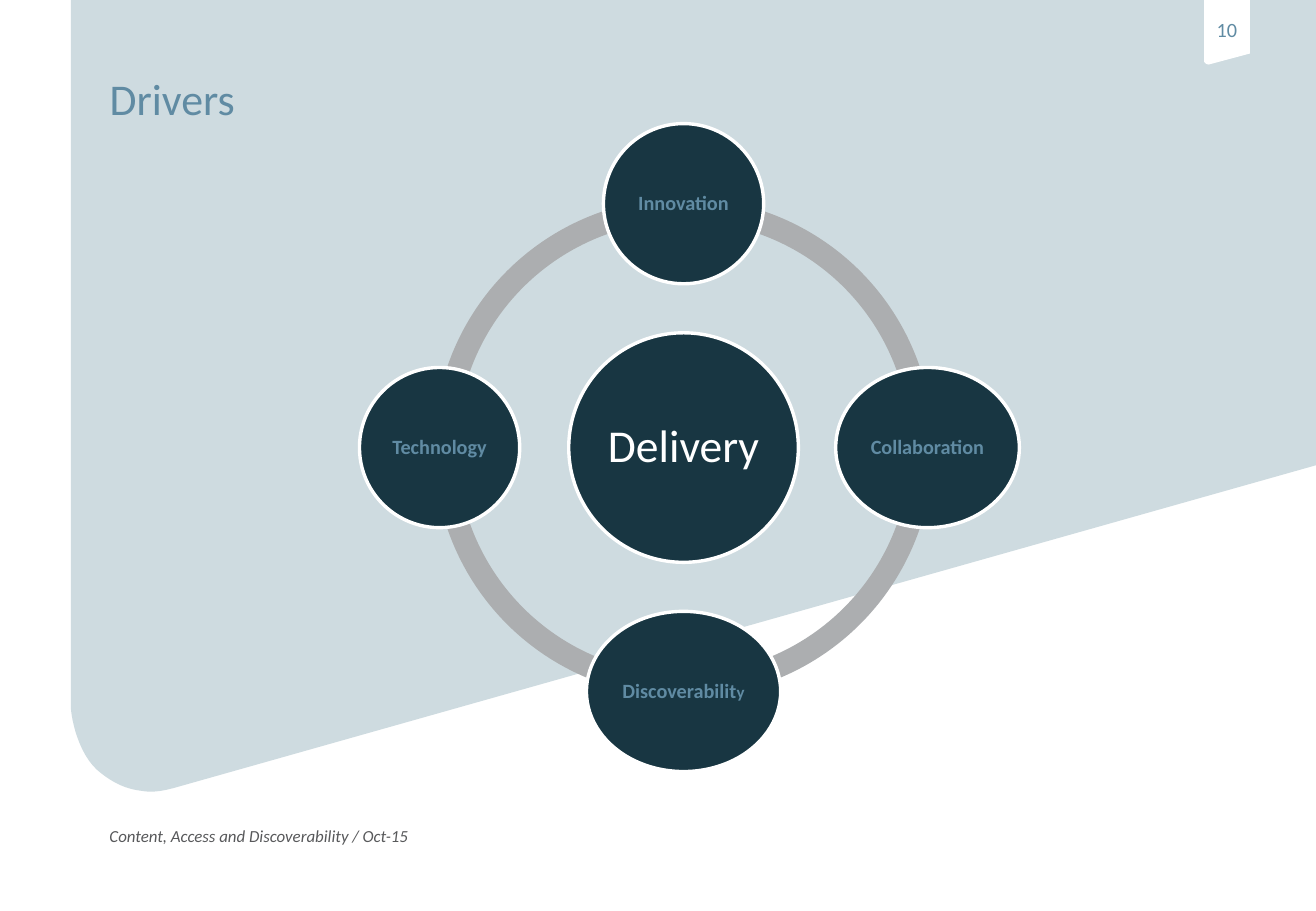
import math

import pptx
import pptx.dml.color
import pptx.enum.shapes
import pptx.enum.text
import pptx.util

Cm = pptx.util.Cm
Pt = pptx.util.Pt
SHAPES = pptx.enum.shapes.MSO_SHAPE
ALIGN = pptx.enum.text.PP_ALIGN
ANCHOR = pptx.enum.text.MSO_ANCHOR

COLORS = {
    "panel": "CEDBE0",
    "accent": "608BA3",
    "node": "183642",
    "ring": "ACAEB0",
    "footer": "58595B",
    "white": "FFFFFF",
}


def rgb(name):
    return pptx.dml.color.RGBColor.from_string(COLORS[name])


def write_text(shape, *spans, size=12, color="accent", bold=False, italic=False,
               align=ALIGN.LEFT, anchor=ANCHOR.TOP, insets=(0, 0, 0, 0),
               spacing=1.0, wrap=True):
    """Fill a shape with one paragraph; a span is a text or a (text, size) pair."""
    frame = shape.text_frame
    frame.auto_size = pptx.enum.text.MSO_AUTO_SIZE.NONE
    frame.word_wrap = wrap
    frame.vertical_anchor = anchor
    (frame.margin_left, frame.margin_top,
     frame.margin_right, frame.margin_bottom) = [Cm(inset) for inset in insets]
    para = frame.paragraphs[0]
    para.alignment = align
    para.line_spacing = spacing
    for item in spans:
        text, span_size = item if isinstance(item, tuple) else (item, size)
        span = para.add_run()
        span.text = text
        span.font.name = "Calibri"
        span.font.size = Pt(span_size)
        span.font.bold = bold
        span.font.italic = italic
        span.font.color.rgb = rgb(color)


def paint(shape, fill, line=None):
    shape.shadow.inherit = False
    shape.fill.solid()
    shape.fill.fore_color.rgb = rgb(fill)
    if line:
        shape.line.color.rgb = rgb(line)
        shape.line.width = Pt(2)
    else:
        shape.line.fill.background()


def curve(*controls, steps=12):
    """Points along a cubic curve, without its first point."""
    points = []
    for step in range(1, steps + 1):
        t = step / steps
        weights = ((1 - t) ** 3, 3 * t * (1 - t) ** 2, 3 * t * t * (1 - t), t ** 3)
        points.append(tuple(sum(weight * point[axis] for weight, point in zip(weights, controls))
                            for axis in (0, 1)))
    return points


def add_outline(page, left, top, points, fill):
    points = [(Cm(x), Cm(y)) for x, y in points]
    builder = page.shapes.build_freeform(*points[0])
    builder.add_line_segments(points[1:], close=True)
    shape = builder.convert_to_shape(Cm(left), Cm(top))
    paint(shape, fill)
    return shape


def add_panel(page, left, top, width, height):
    """Slanted background panel with a rounded lower left corner."""
    corner = [(2.15, height - 0.08), (2.03, height - 0.05), (1.75, height + 0.03),
              (1.49, height - 0.02), (1.24, height - 0.05), (0.93, height - 0.13),
              (0.55, height - 0.46), (0.17, height - 0.81), (0.02, height - 1.47),
              (0, height - 1.78)]
    points = [(0, 0), (width, 0), (width, 9.73), corner[0]]
    for start in (0, 3, 6):
        points += curve(*corner[start:start + 4])
    add_outline(page, left, top, points, "panel")


def add_page_tag(page, left, top, width, height, number):
    points = [(0, 0), (width, 0), (width, height - 0.23), (0.1, height)]
    points += curve((0.1, height), (0.05, height), (0, height - 0.04), (0, height - 0.08))
    tag = add_outline(page, left, top, points, "white")
    write_text(tag, number, align=ALIGN.CENTER, anchor=ANCHOR.MIDDLE,
               insets=(0, 0, 0, 0.1), wrap=False)


def add_title(page, left, top, width, height, text):
    title = page.shapes.title
    title.left, title.top, title.width, title.height = map(Cm, (left, top, width, height))
    write_text(title, text, size=26)
    # Bring the title in front of the background panel
    title.element.getparent().append(title.element)


def add_footer(page, left, top, width, height, text):
    footer = page.shapes.add_textbox(*map(Cm, (left, top, width, height)))
    write_text(footer, text, size=10, color="footer", italic=True, wrap=False)


def add_circle(page, center_x, center_y, width, height, *spans, **text_format):
    circle = page.shapes.add_shape(
        SHAPES.OVAL, Cm(center_x - width / 2), Cm(center_y - height / 2),
        Cm(width), Cm(height))
    paint(circle, "node", line="white")
    write_text(circle, *spans, align=ALIGN.CENTER, anchor=ANCHOR.MIDDLE,
               spacing=0.9, **text_format)


def add_driver_cycle(page, left, top, size, hub, drivers):
    """Ring of quarter arcs with a hub and evenly spaced drivers, clockwise from the top."""
    middle_x, middle_y = left + size / 2, top + size / 2
    thickness = 0.046
    orbit = size * (1 - thickness) / 2 + 0.12
    node_height = 3.35

    # Ring
    for start in range(0, 360, 90):
        arc = page.shapes.add_shape(SHAPES.BLOCK_ARC, *map(Cm, (left, top, size, size)))
        arc.adjustments[0] = start * 0.6
        arc.adjustments[1] = (start + 90) % 360 * 0.6
        arc.adjustments[2] = thickness
        paint(arc, "ring")

    # Hub and drivers
    add_circle(page, middle_x, middle_y, 4.8, 4.8, hub, size=27, color="white",
               insets=(0.1,) * 4)
    for index, (width, spans) in enumerate(drivers):
        angle = math.tau * index / len(drivers)
        add_circle(page, middle_x + orbit * math.sin(angle),
                   middle_y - orbit * math.cos(angle),
                   width, node_height, *spans, bold=True, insets=(0.05,) * 4)


def main():
    deck = pptx.Presentation()
    deck.slide_width, deck.slide_height = Cm(27.51), Cm(19.05)
    page = deck.slides.add_slide(deck.slide_layouts[5])

    # Background and page furniture
    add_panel(page, 1.48, 0, 26.03, 16.56)
    add_page_tag(page, 25.17, 0, 0.96, 1.35, "10")
    add_footer(page, 2.29, 17.27, 5.82, 0.43, "Content, Access and Discoverability / Oct-15")

    # Content
    add_title(page, 2.29, 1.5, 22.89, 1.04, "Drivers")
    add_driver_cycle(page, 9.07, 4.14, 10.44, "Delivery", [
        (3.35, ["Innovation"]),
        (3.84, ["Collaboration"]),
        (4.06, ["Discoverabilit", ("y", 10)]),
        (3.35, ["Technology"]),
    ])
    deck.save("out.pptx")


if __name__ == "__main__":
    main()
